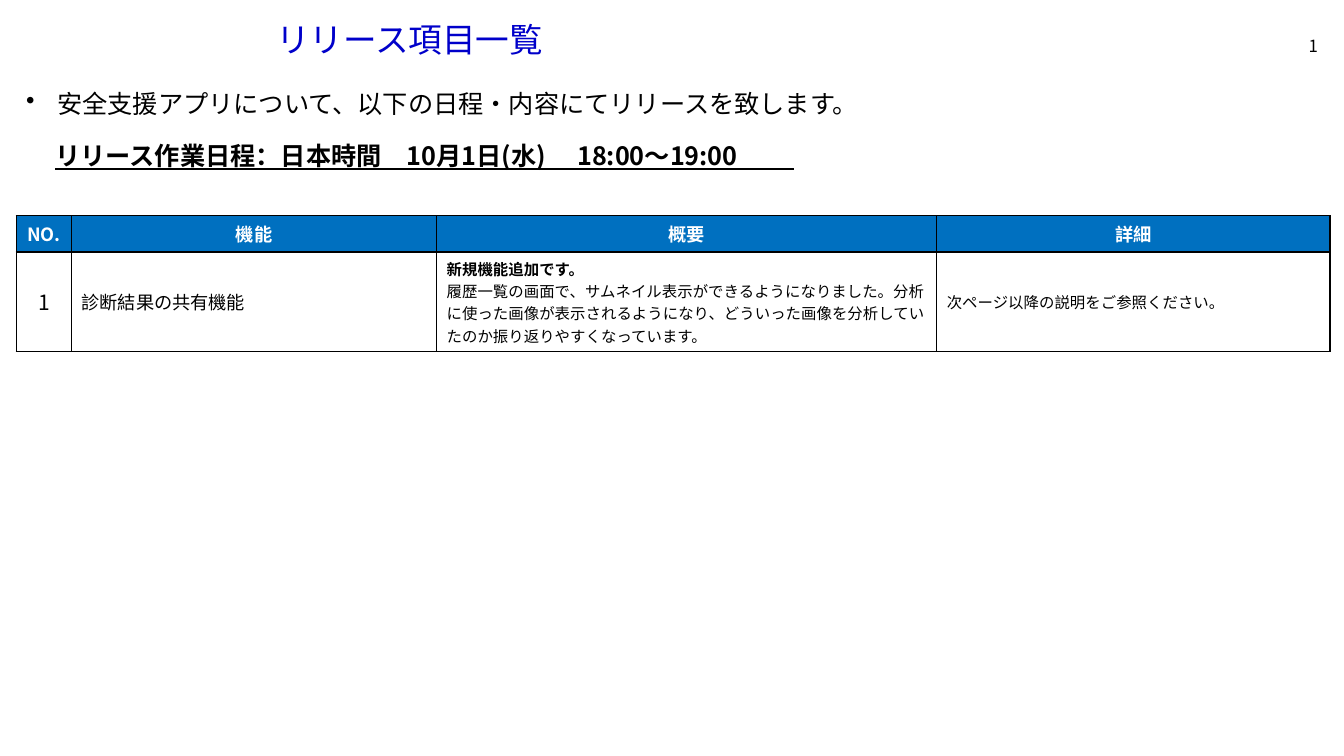
from dataclasses import dataclass, field

from lxml import etree
from pptx import Presentation
from pptx import util as u
from pptx.dml.color import RGBColor
from pptx.enum import text
from pptx.oxml import ns

FONT = "Noto Sans CJK JP"
COLOURS = {"ink": "000000", "title": "0000CA", "header": "0070C0", "paper": "FFFFFF"}
WIDTH, HEIGHT = u.Inches(13.33), u.Inches(7.5)
LEFT, CENTER, RIGHT = (text.PP_ALIGN.LEFT, text.PP_ALIGN.CENTER, text.PP_ALIGN.RIGHT)


@dataclass
class Line:
    words: str
    size: float
    colour: str = "ink"
    align: text.PP_ALIGN = LEFT
    style: dict = field(default_factory=dict)
    spacing: float = 1.0
    bullet: bool = False


@dataclass
class Block:
    left: float
    top: float
    width: float
    height: float
    line: Line


def across(percent: float) -> int:
    return round(WIDTH * percent / 100)


def down(percent: float) -> int:
    return round(HEIGHT * percent / 100)


def rgb(name: str) -> RGBColor:
    return RGBColor.from_string(COLOURS[name])


def write_line(paragraph, line: Line) -> None:
    paragraph.alignment = line.align
    paragraph.line_spacing = line.spacing
    if line.bullet:
        properties = paragraph._p.get_or_add_pPr()
        properties.set("marL", str(u.Inches(0.31)))
        properties.set("indent", str(-u.Inches(0.31)))
        etree.SubElement(properties, ns.qn("a:buChar")).set("char", "•")
    run = paragraph.add_run()
    run.text = line.words
    formats = {"name": FONT, "size": u.Pt(line.size), "bold": False, **line.style}
    for name, value in formats.items():
        setattr(run.font, name, value)
    run.font.color.rgb = rgb(line.colour)
    east_asian = etree.Element(ns.qn("a:ea"), typeface=FONT)
    run.font._element.find(ns.qn("a:latin")).addnext(east_asian)


def draw_block(slide, block: Block) -> None:
    frame = slide.shapes.add_textbox(
        across(block.left), down(block.top), across(block.width), down(block.height)
    ).text_frame
    frame.word_wrap = True
    frame.vertical_anchor = text.MSO_ANCHOR.MIDDLE
    write_line(frame.paragraphs[0], block.line)


def draw_borders(cell) -> None:
    properties = cell._tc.get_or_add_tcPr()
    for position, side in enumerate(("lnL", "lnR", "lnT", "lnB")):
        border = etree.Element(ns.qn(f"a:{side}"), w=str(u.Pt(1)))
        fill = etree.SubElement(border, ns.qn("a:solidFill"))
        etree.SubElement(fill, ns.qn("a:srgbClr"), val=COLOURS["ink"])
        properties.insert(position, border)


def draw_cell(cell, lines: list[Line], fill: str) -> None:
    cell.fill.solid()
    cell.fill.fore_color.rgb = rgb(fill)
    cell.vertical_anchor = text.MSO_ANCHOR.MIDDLE
    draw_borders(cell)
    frame = cell.text_frame
    for index, line in enumerate(lines):
        write_line(frame.add_paragraph() if index else frame.paragraphs[0], line)


def draw_releases(slide) -> None:
    columns, rows = (4.13, 27.16, 37.21, 29.26), (4.27, 11.6)
    table = slide.shapes.add_table(
        len(rows), len(columns), across(1.2), down(28.53),
        across(sum(columns)), down(sum(rows)),
    ).table
    table.horz_banding = False
    for column, share in zip(table.columns, columns):
        column.width = across(share)
    for row, share in zip(table.rows, rows):
        row.height = down(share)
    for index, (heading, lines) in enumerate(RELEASES.items()):
        header = Line(heading, 13, "paper", CENTER, BOLD)
        draw_cell(table.cell(0, index), [header], "header")
        draw_cell(table.cell(1, index), lines, "paper")


BOLD = {"bold": True}
RELEASES = {
    "NO.": [Line("1", 15, align=CENTER)],
    "機能": [Line("診断結果の共有機能", 13)],
    "概要": [
        Line("新規機能追加です。", 11, style=BOLD),
        Line(
            "履歴一覧の画面で、サムネイル表示ができるようになりました。"
            "分析に使った画像が表示されるようになり、"
            "どういった画像を分析していたのか振り返りやすくなっています。", 11,
        ),
    ],
    "詳細": [Line("次ページ以降の説明をご参照ください。", 11)],
}
BLOCKS = [
    Block(93.62, 4, 5.18, 4, Line("1", 12, align=RIGHT)),
    Block(1.2, 11.07, 96.62, 5.33, Line(
        "安全支援アプリについて、以下の日程・内容にてリリースを致します。", 18, bullet=True,
    )),
    Block(3.38, 17.87, 64.14, 5.33, Line(
        "リリース作業日程：日本時間　10月1日(水) 　18:00～19:00　 　", 18,
        style={**BOLD, "underline": True},
    )),
    Block(19.8, 2.67, 71.64, 5.6, Line("リリース項目一覧", 24, "title", spacing=0.9)),
]


def main() -> None:
    deck = Presentation()
    deck.slide_width, deck.slide_height = WIDTH, HEIGHT
    slide = deck.slides.add_slide(deck.slide_layouts[6])
    draw_releases(slide)
    for block in BLOCKS:
        draw_block(slide, block)
    deck.save("out.pptx")


if __name__ == "__main__":
    main()
